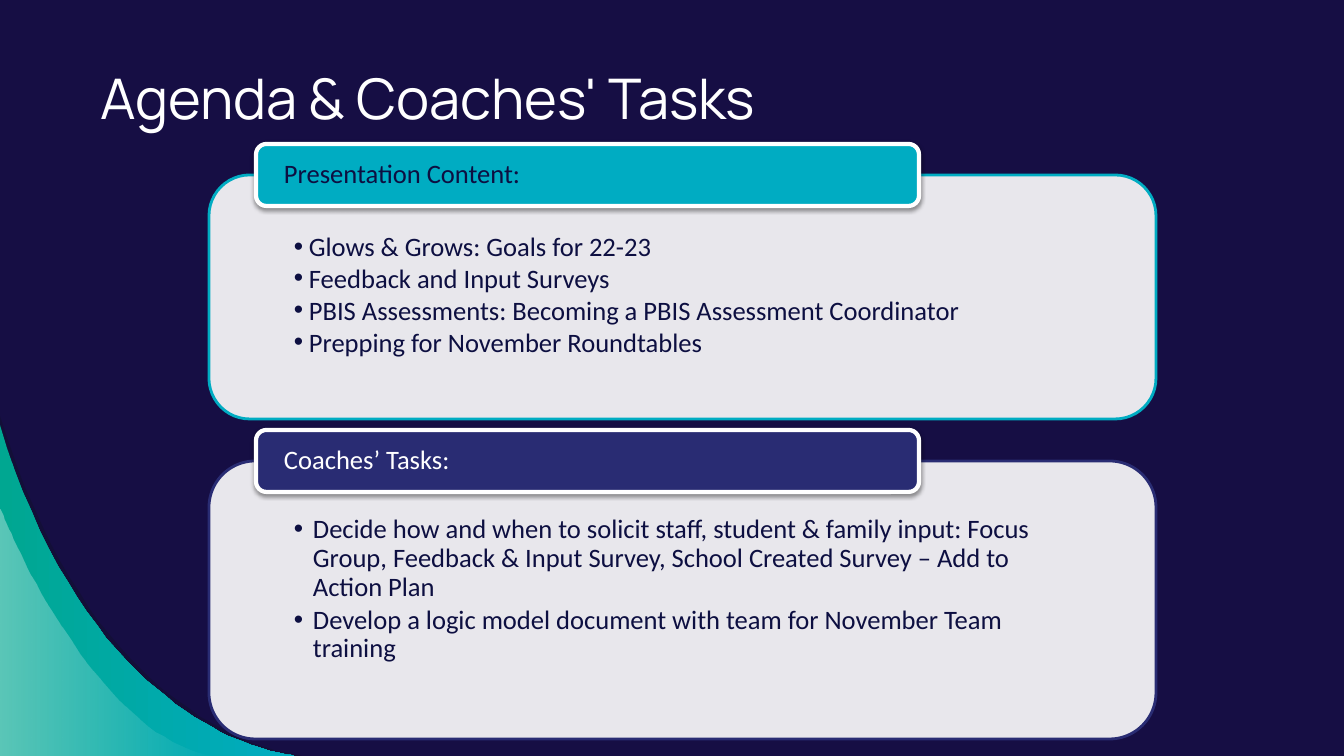
from lxml import etree
from pptx import Presentation
from pptx import util as u
from pptx.dml.color import RGBColor
from pptx.enum import shapes, text
from pptx.oxml import ns

SCALE = 914400 / 100.8
WHITE = RGBColor(0xFF, 0xFF, 0xFF)
NIGHT = RGBColor(0x16, 0x0E, 0x44)
SHADE = RGBColor(0x12, 0x10, 0x2F)
INK = RGBColor(0x0D, 0x0F, 0x41)
TEAL = RGBColor(0x00, 0xAC, 0xC2)
GREEN = RGBColor(0x00, 0xA7, 0x91)
INDIGO = RGBColor(0x29, 0x2C, 0x73)


def px(*lengths):
    return [u.Emu(round(length * SCALE)) for length in lengths]


def add_text(lines, box, insets, size=19, font="Calibri", color=INK,
             anchor=text.MSO_ANCHOR.TOP, spacing=1.0, after=0, hang=0):
    frame = slide.shapes.add_textbox(*px(*box)).text_frame
    frame.word_wrap = True
    frame.vertical_anchor = anchor
    (frame.margin_left, frame.margin_top,
     frame.margin_right, frame.margin_bottom) = px(*insets)
    for index, line in enumerate(lines):
        paragraph = frame.add_paragraph() if index else frame.paragraphs[0]
        paragraph.line_spacing = spacing
        paragraph.space_after = px(after)[0]
        run = paragraph.add_run()
        run.text = line
        run.font.size = u.Pt(size)
        run.font.name = font
        run.font.color.rgb = color
        if hang:
            properties = paragraph._p.get_or_add_pPr()
            properties.set("marL", str(px(hang)[0]))
            properties.set("indent", str(px(-hang)[0]))
            etree.SubElement(properties, ns.qn("a:buFont"), typeface="Arial")
            etree.SubElement(properties, ns.qn("a:buChar"), char="•")


presentation = Presentation()
presentation.slide_width, presentation.slide_height = px(1344, 756)
slide = presentation.slides.add_slide(presentation.slide_layouts[6])
slide.background.fill.solid()
slide.background.fill.fore_color.rgb = NIGHT

waves = [
    ([(0, 416), (99, 745), (305, 756), (305, 756)], [(SHADE, 54)]),
    ([(0, 425), (96, 745), (297, 756), (297, 756)], [(GREEN, 100), (TEAL, 100)]),
    ([(0, 510), (0, 510), (92, 741), (218, 756)], [(WHITE, 36), (WHITE, 0)]),
]
for controls, colors in waves:
    curve = []
    for step in range(41):
        t = step / 40
        weights = [(1 - t) ** 3, 3 * t * (1 - t) ** 2, 3 * t * t * (1 - t), t ** 3]
        curve.append(tuple(sum(weight * point[axis] for weight, point in zip(weights, controls))
                           for axis in (0, 1)))
    builder = slide.shapes.build_freeform(*curve[0], scale=SCALE)
    builder.add_line_segments(curve[1:] + [(0, 756)], close=True)
    wave = builder.convert_to_shape()
    wave.shadow.inherit = False
    wave.line.fill.background()
    if len(colors) == 1:
        wave.fill.solid()
        targets = [wave.fill.fore_color]
    else:
        wave.fill.gradient()
        wave.fill.gradient_angle = 0
        targets = [stop.color for stop in wave.fill.gradient_stops]
    for target, (color, _) in zip(targets, colors):
        target.rgb = color
    for element, (_, alpha) in zip(wave._element.spPr.iter(ns.qn("a:srgbClr")), colors):
        etree.SubElement(element, ns.qn("a:alpha"), val=str(alpha * 1000))

sections = [
    (175, 244, TEAL, INK, "Presentation Content:",
     ["Glows & Grows: Goals for 22-23",
      "Feedback and Input Surveys",
      "PBIS Assessments: Becoming a PBIS Assessment Coordinator",
      "Prepping for November Roundtables"],
     dict(hang=15)),
    (461, 278, INDIGO, WHITE, "Coaches’ Tasks:",
     ["Decide how and when to solicit staff, student & family input: Focus Group, "
      "Feedback & Input Survey, School Created Survey – Add to Action Plan",
      "Develop a logic model document with team for November Team training"],
     dict(hang=19, spacing=0.9, after=4)),
]
for top, height, accent, label_color, label, items, list_format in sections:
    panels = [
        ((209, top, 947, height), WHITE, accent, 2),
        ((256, top - 31, 663, 62), accent, WHITE, 3),
    ]
    for box, fill, line, width in panels:
        panel = slide.shapes.add_shape(shapes.MSO_SHAPE.ROUNDED_RECTANGLE, *px(*box))
        panel.shadow.inherit = False
        panel.fill.solid()
        panel.fill.fore_color.rgb = fill
        panel.line.color.rgb = line
        panel.line.width = u.Pt(width)
        properties = panel._element.spPr
        if fill == WHITE:
            color = properties.find(ns.qn("a:solidFill"))[0]
            etree.SubElement(color, ns.qn("a:alpha"), val="90000")
            add_text(items, (221, top + 12, 923, height - 24), (73, 43, 73, 15), **list_format)
        else:
            effects = properties.find(ns.qn("a:effectLst"))
            shadow = etree.SubElement(effects, ns.qn("a:outerShdw"), blurRad=str(u.Pt(3.1)),
                                      dist=str(u.Pt(1.6)), dir="5400000", rotWithShape="0")
            color = etree.SubElement(shadow, ns.qn("a:srgbClr"), val="000000")
            etree.SubElement(color, ns.qn("a:alpha"), val="38000")
            add_text([label], (259, top - 28, 657, 56), (25, 0, 25, 0), color=label_color,
                     anchor=text.MSO_ANCHOR.MIDDLE, spacing=0.9)

add_text(["Agenda & Coaches' Tasks"], (90, 51, 1034, 93), (10, 10, 10, 10), size=40,
         font="Manrope", color=WHITE, anchor=text.MSO_ANCHOR.MIDDLE)

presentation.save("out.pptx")
